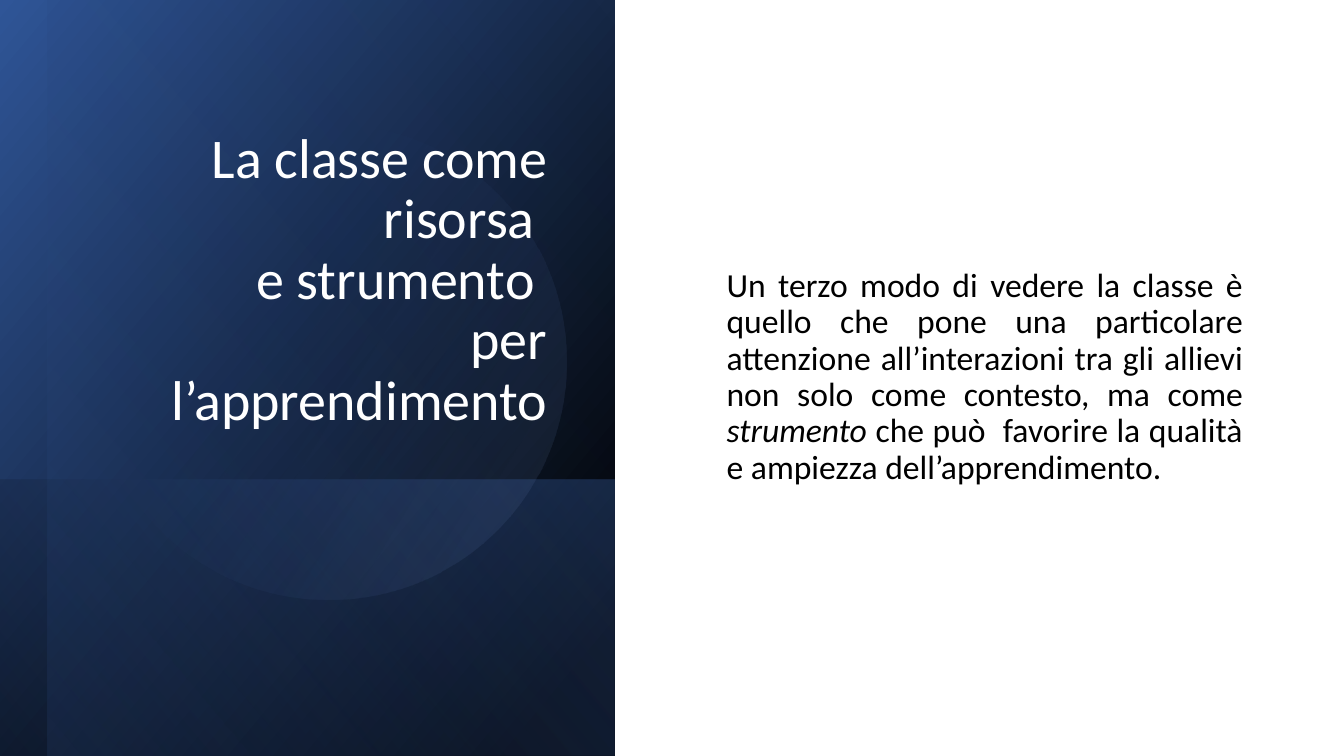
from lxml import etree
from pptx import Presentation
from pptx.dml.color import RGBColor
from pptx.enum.shapes import MSO_SHAPE as Preset
from pptx.enum.text import MSO_ANCHOR as Anchor, PP_ALIGN as Align
from pptx.oxml import parse_xml
from pptx.oxml.ns import nsdecls, qn
from pptx.util import Inches, Pt

COLORS = {
    "black": "000000",
    "white": "FFFFFF",
    "navy": "2F5597",
    "blue": "4472C4",
    "sky": "8FAADC",
}
HEIGHT = 7.5
PANEL_WIDTH = 6.1


def add_gradient_shape(slide, preset, frame, rotation, flipped, stops, angle):
    shape = slide.shapes.add_shape(preset, *map(Inches, frame))
    shape.rotation = rotation
    shape.shadow.inherit = False
    shape.line.fill.background()
    properties = shape.element.spPr
    if flipped:
        properties.get_or_add_xfrm().set("flipH", "1")
    gradient = parse_xml(f'<a:gradFill {nsdecls("a")} rotWithShape="1"/>')
    stop_list = etree.SubElement(gradient, qn("a:gsLst"))
    for position, color, opacity in stops:
        stop = etree.SubElement(stop_list, qn("a:gs"), pos=str(position * 1000))
        tint = etree.SubElement(stop, qn("a:srgbClr"), val=COLORS[color])
        if opacity < 100:
            etree.SubElement(tint, qn("a:alpha"), val=str(opacity * 1000))
    etree.SubElement(gradient, qn("a:lin"), ang=str(angle * 60000), scaled="0")
    properties.find(qn("a:prstGeom")).addnext(gradient)


def write_text(shape, frame, anchor, runs, paragraph_format, font_format, color):
    shape.left, shape.top, shape.width, shape.height = map(Inches, frame)
    shape.text_frame.word_wrap = True
    shape.text_frame.vertical_anchor = anchor
    paragraph = shape.text_frame.paragraphs[0]
    for name, value in paragraph_format.items():
        setattr(paragraph, name, value)
    for text, italic in runs:
        for index, line in enumerate(text.split("\n")):
            if index:
                paragraph.add_line_break()
            run = paragraph.add_run()
            run.text = line
            for name, value in font_format.items():
                setattr(run.font, name, value)
            run.font.italic = italic
            run.font.color.rgb = RGBColor.from_string(COLORS[color])


presentation = Presentation()
presentation.slide_width = Inches(13.333)
presentation.slide_height = Inches(HEIGHT)
slide = presentation.slides.add_slide(presentation.slide_layouts[5])

panels = [
    (0, 0, PANEL_WIDTH, HEIGHT, [(8, "black", 100), (100, "navy", 100)], 50),
    (0, 4.76, PANEL_WIDTH, 2.74, [(2, "blue", 29), (100, "black", 30)], 130),
    (0.47, 0, 5.63, HEIGHT, [(0, "black", 0), (99, "blue", 11)], 130),
]
for left, top, width, height, stops, angle in panels:
    inset = (width - height) / 2
    frame = (left + inset, top - inset, height, width)
    add_gradient_shape(slide, Preset.RECTANGLE, frame, 90, True, stops, angle)

add_gradient_shape(slide, Preset.OVAL, (0.9, 1.23, 4.72, 4.72), 101.6, False,
                   [(39, "blue", 0), (100, "sky", 15)], 290)

title = slide.shapes.title
slide.shapes.element.append(title.element)
write_text(
    title, (0.9, 0.64, 4.63, 3.7), Anchor.BOTTOM,
    [("La classe come risorsa \ne strumento \nper l’apprendimento", False)],
    {"alignment": Align.RIGHT, "line_spacing": 0.9},
    {"name": "Calibri", "size": Pt(40)}, "white",
)

body = slide.shapes.add_textbox(0, 0, 0, 0)
write_text(
    body, (7.11, 0.71, 5.32, 6.07), Anchor.MIDDLE,
    [
        ("Un terzo modo di vedere la classe è quello che pone una particolare "
         "attenzione all’interazioni tra gli allievi non solo come contesto, "
         "ma come ", False),
        ("strumento", True),
        (" che può  favorire la qualità e ampiezza dell’apprendimento. ", False),
    ],
    {"alignment": Align.JUSTIFY, "line_spacing": 0.9},
    {"name": "Calibri", "size": Pt(24)}, "black",
)

presentation.save("out.pptx")
